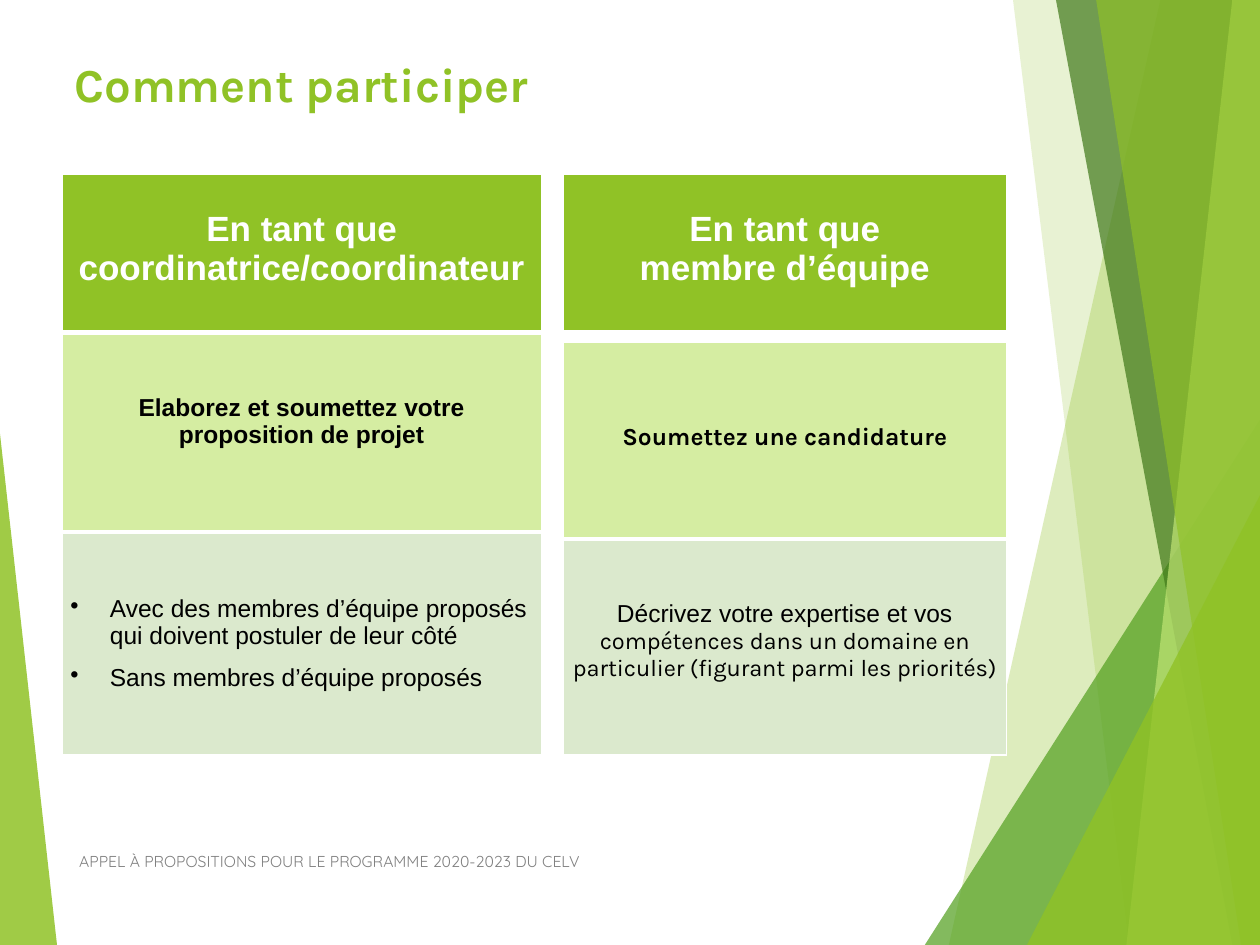
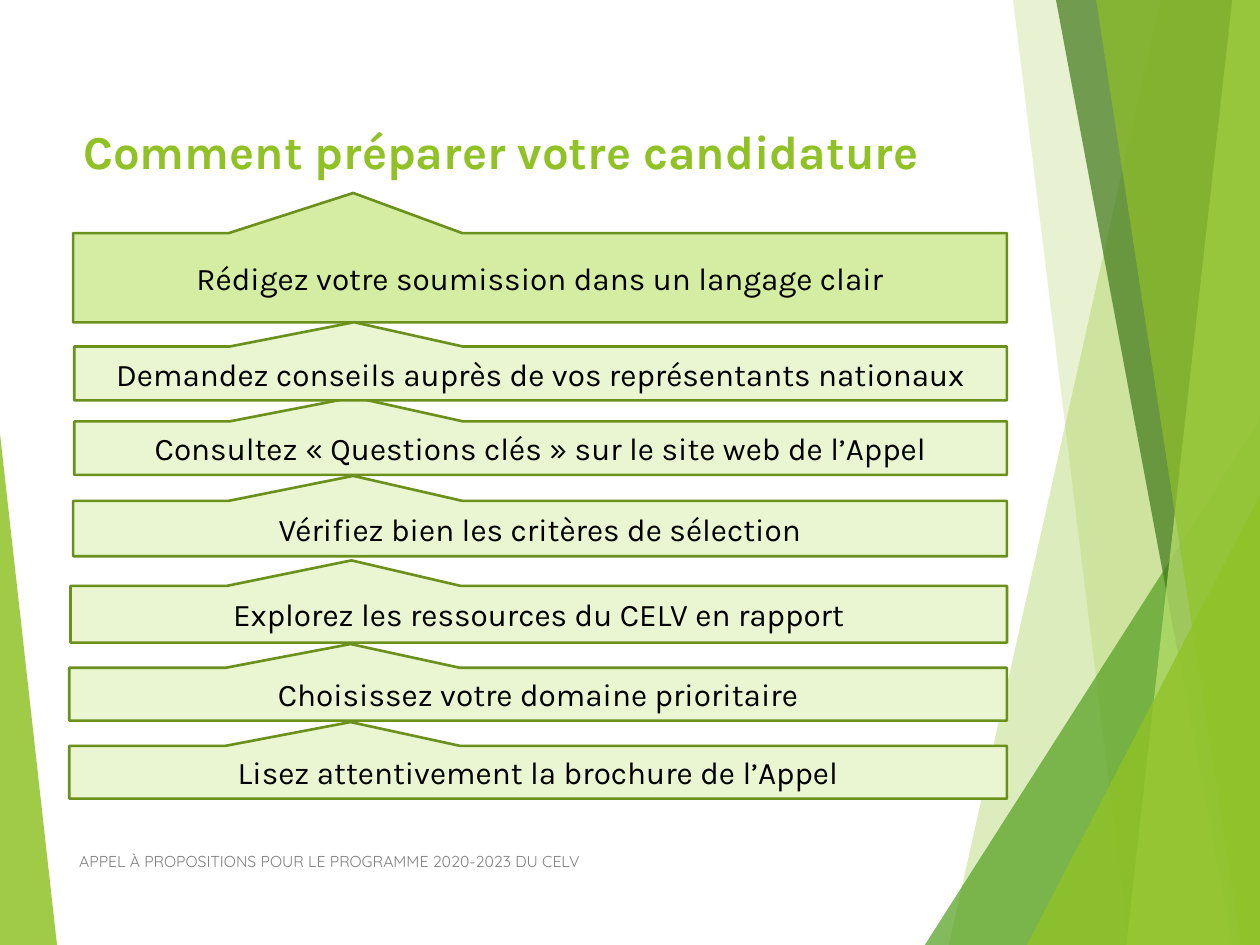
import pptx
import pptx.dml.color
import pptx.enum.shapes
import pptx.enum.text
import pptx.oxml
import pptx.oxml.ns
import pptx.util

Pt = pptx.util.Pt
ALIGN = pptx.enum.text.PP_ALIGN
ANCHOR = pptx.enum.text.MSO_ANCHOR
SHAPE = pptx.enum.shapes.MSO_SHAPE
NAMESPACE = pptx.oxml.ns.nsdecls("a")

WIDTH, HEIGHT = 720, 540
GREEN, LIME, PALE, MIST = "90C226", "D5EDA2", "EAF6D1", "DBE9CD"
OLIVE, FOREST, LEAF, SPRING = "6B901C", "3F7819", "54A021", "C0E474"
BLACK, WHITE, GREY = "000000", "FFFFFF", "808080"


def colour(hex_code):
    return pptx.dml.color.RGBColor.from_string(hex_code)


def points(*lengths):
    return [Pt(length) for length in lengths]


def paint(fill, hex_code, opacity=100):
    fill.solid()
    fill.fore_color.rgb = colour(hex_code)
    if opacity < 100:
        alpha = pptx.oxml.parse_xml(f'<a:alpha {NAMESPACE} val="{opacity * 1000}"/>')
        fill._xPr.find(".//" + pptx.oxml.ns.qn("a:srgbClr")).append(alpha)


def style(font, name, size, hex_code, bold=False):
    font.name, font.size, font.bold = name, Pt(size), bold
    font.color.rgb = colour(hex_code)


def add_facet(shape, hex_code, opacity):
    shape.shadow.inherit = False
    shape.line.fill.background()
    paint(shape.fill, hex_code, opacity)


def add_band(slide, top_x, bottom_x, hex_code, opacity):
    outline = slide.shapes.build_freeform(Pt(top_x), Pt(0), 1)
    corners = [(WIDTH, 0), (WIDTH, HEIGHT), (bottom_x, HEIGHT)]
    outline.add_line_segments([points(*corner) for corner in corners])
    add_facet(outline.convert_to_shape(), hex_code, opacity)


def add_wedge(slide, box, apex, hex_code, opacity):
    wedge = slide.shapes.add_shape(SHAPE.ISOSCELES_TRIANGLE, *points(*box))
    wedge.adjustments[0] = apex
    add_facet(wedge, hex_code, opacity)


def add_backdrop(slide):
    add_band(slide, 663.1, 542.2, GREEN, 30)
    add_band(slide, 578.9, 645.1, GREEN, 20)
    add_wedge(slide, (528.5, 239.8, 191.5, 300.2), 1, LEAF, 72)
    add_band(slide, 603.4, 704.2, FOREST, 70)
    add_band(slide, 704.2, 643.7, SPRING, 70)
    add_band(slide, 626.4, 709.2, GREEN, 65)
    add_wedge(slide, (586.8, 283, 133.2, 257), 1, GREEN, 80)
    add_wedge(slide, (0, 247.7, 32.6, 292.3), 0, GREEN, 85)


def add_footer(slide, box):
    footer = slide.shapes.add_textbox(*points(*box)).text_frame
    footer.word_wrap = True
    footer.text = "APPEL À PROPOSITIONS POUR LE PROGRAMME 2020-2023 DU CELV"
    style(footer.paragraphs[0].font, "Quicksand", 9, GREY)


def add_page(deck, heading, title_box):
    slide = deck.slides.add_slide(deck.slide_layouts[5])
    add_backdrop(slide)
    add_footer(slide, (38.2, 483.1, 300.2, 28.8))
    title = slide.shapes.title
    title.left, title.top, title.width, title.height = points(*title_box)
    frame = title.text_frame
    frame.text = heading
    frame.vertical_anchor = ANCHOR.TOP
    frame.auto_size = pptx.enum.text.MSO_AUTO_SIZE.NONE
    frame.paragraphs[0].alignment = ALIGN.LEFT
    style(frame.paragraphs[0].font, "Karla", 27, GREEN, True)
    return slide


def add_cells(slide, left, top, width, heights, fills, side_margin):
    frame = slide.shapes.add_table(len(heights), 1, *points(left, top, width, sum(heights)))
    table = frame.table
    table.first_row = table.horz_banding = False
    table.columns[0].width = Pt(width)
    cells = []
    for index, (height, fill) in enumerate(zip(heights, fills)):
        table.rows[index].height = Pt(height)
        cell = table.cell(index, 0)
        properties = cell._tc.get_or_add_tcPr()
        for side in "LRTB":
            thickness = Pt(3 if side == "B" and index == 0 else 1)
            properties.append(pptx.oxml.parse_xml(
                f'<a:ln{side} {NAMESPACE} w="{thickness}"><a:solidFill>'
                f'<a:srgbClr val="{WHITE}"/></a:solidFill></a:ln{side}>'))
        paint(cell.fill, fill)
        cell.vertical_anchor = ANCHOR.MIDDLE
        cell.margin_left = cell.margin_right = Pt(side_margin)
        cell.margin_top = Pt(3)
        cells.append(cell)
    return cells


def write_centred(cell, text, font_name, size, hex_code, bottom_margin):
    cell.text = text
    cell.margin_bottom = Pt(bottom_margin)
    for paragraph in cell.text_frame.paragraphs:
        paragraph.alignment = ALIGN.CENTER
        style(paragraph.font, font_name, size, hex_code, True)


def write_bullets(cell, items):
    cell.text = "\n".join(items)
    cell.margin_bottom = Pt(3)
    for index, paragraph in enumerate(cell.text_frame.paragraphs):
        properties = paragraph._p.get_or_add_pPr()
        properties.set("marL", str(Pt(22.5)))
        properties.set("indent", str(-Pt(22.5)))
        properties.append(pptx.oxml.parse_xml(f'<a:buChar {NAMESPACE} char="•"/>'))
        if index:
            paragraph.line_spacing = 1.5
        style(paragraph.font, "Arial", 14, BLACK)


def write_expertise(cell):
    cell.margin_bottom = Pt(9.5)
    paragraph = cell.text_frame.paragraphs[0]
    paragraph.alignment = ALIGN.CENTER
    for text, font_name, size in (
        ("Décrivez votre expertise et vos ", "Arial", 14),
        ("compétences dans un domaine en particulier (figurant parmi les priorités)",
         "Karla", 13.5),
    ):
        run = paragraph.add_run()
        run.text = text
        style(run.font, font_name, size, BLACK)


def add_role(slide, left, width, top, heights, role):
    request, details = add_cells(slide, left, top, width, heights, (LIME, MIST), 5)
    [header] = add_cells(slide, left, 99.4, width, [90.5], [GREEN], 7.2)
    write_centred(header, role, "Arial", 20, WHITE, 8)
    return request, details


def build_participation(deck):
    slide = add_page(deck, "Comment participer", (35.3, 28.1, 507.6, 63.4))
    request, details = add_role(slide, 35.3, 274.3, 182.2, (121.7, 127.4),
                                "En tant que coordinatrice/coordinateur")
    write_centred(request, "Elaborez et soumettez votre proposition de projet",
                  "Arial", 14, BLACK, 7.5)
    write_bullets(details, [
        "Avec des membres d’équipe proposés qui doivent postuler de leur côté",
        "Sans membres d’équipe proposés",
    ])
    request, details = add_role(slide, 321.8, 253.4, 195.8, (112.3, 123.5),
                                "En tant que\nmembre d’équipe")
    write_centred(request, "Soumettez une candidature", "Karla", 14, BLACK, 7.5)
    write_expertise(details)


def add_step(slide, box, text, fill):
    step = slide.shapes.add_shape(SHAPE.RECTANGULAR_CALLOUT, *points(*box))
    step.shadow.inherit = False
    step.adjustments[0], step.adjustments[1] = -0.2, -0.95
    paint(step.fill, fill)
    step.line.color.rgb = colour(OLIVE)
    step.line.width = Pt(1.5)
    frame = step.text_frame
    frame.text = text
    frame.word_wrap = True
    frame.vertical_anchor = ANCHOR.MIDDLE
    frame.paragraphs[0].alignment = ALIGN.CENTER
    style(frame.paragraphs[0].font, "Karla", 18, BLACK)


def build_preparation(deck):
    slide = add_page(deck, "Comment préparer votre candidature",
                     (40.3, 66.2, 507.6, 103.7))
    right = 575.4
    for left, top, height, text, fill in (
        (39.6, 426.2, 30.2, "Lisez attentivement la brochure de l’Appel", PALE),
        (39.6, 381.6, 30.2, "Choisissez votre domaine prioritaire", PALE),
        (40.3, 334.8, 32.4, "Explorez les ressources du CELV en rapport", PALE),
        (41.8, 286.2, 31.7, "Vérifiez bien les critères de sélection", PALE),
        (42.5, 240.8, 30.6, "Consultez « Questions clés » sur le site web de l’Appel", PALE),
        (41.8, 133.2, 51, "Rédigez votre soumission dans un langage clair", LIME),
        (42.5, 198, 30.8, "Demandez conseils auprès de vos représentants nationaux", PALE),
    ):
        add_step(slide, (left, top, right - left, height), text, fill)


def main():
    deck = pptx.Presentation()
    deck.slide_width, deck.slide_height = points(WIDTH, HEIGHT)
    build_participation(deck)
    build_preparation(deck)
    deck.save("out.pptx")


if __name__ == "__main__":
    main()
